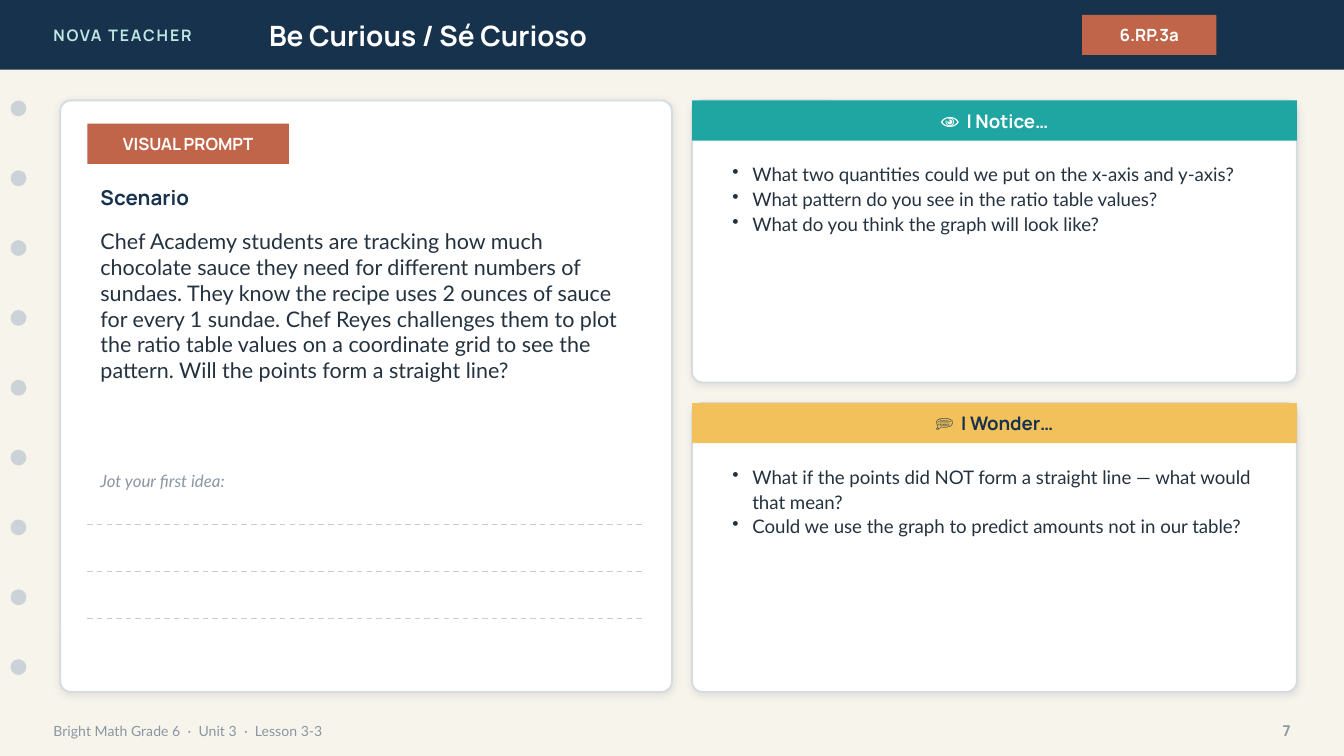
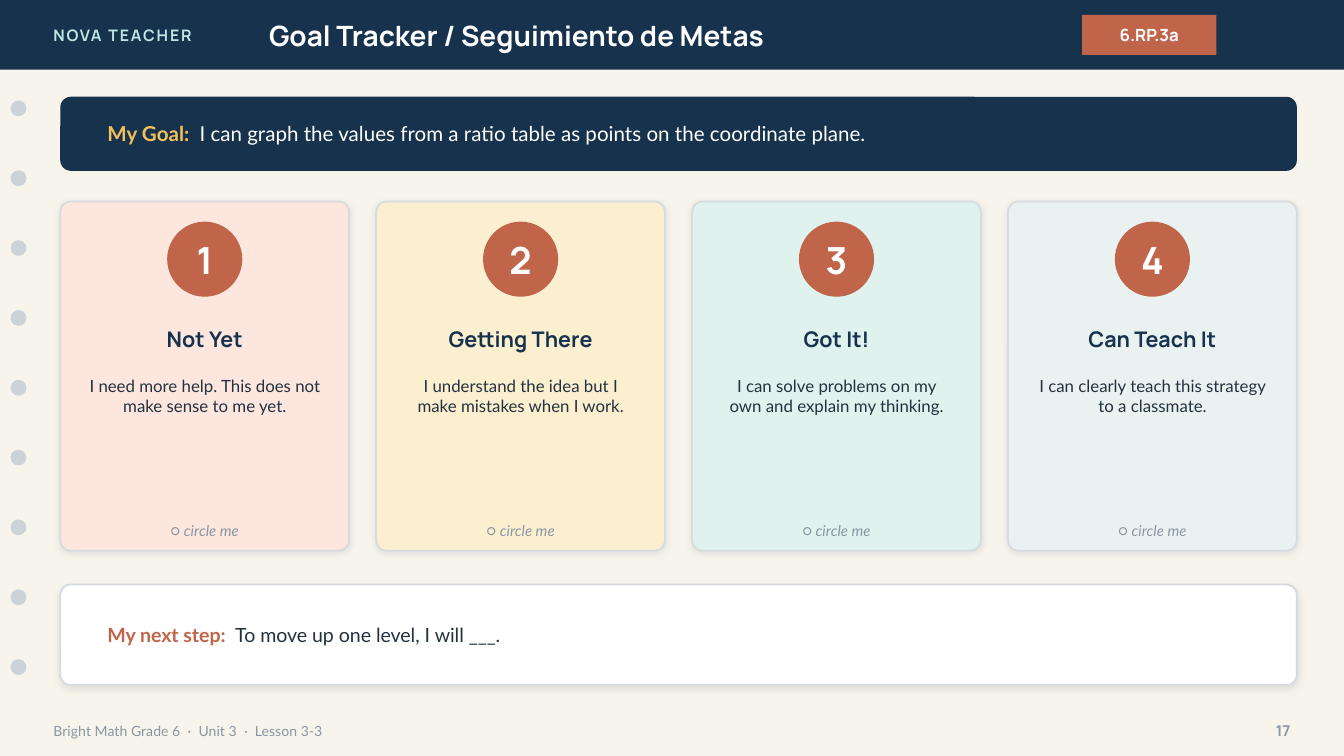
from dataclasses import dataclass, replace
from typing import NamedTuple

from lxml.etree import SubElement
from pptx import Presentation
from pptx.dml.color import RGBColor
from pptx.enum.dml import MSO_LINE
from pptx.enum.shapes import MSO_CONNECTOR, MSO_SHAPE
from pptx.enum.text import MSO_ANCHOR as ANCHOR, MSO_AUTO_SIZE, PP_ALIGN as ALIGN
from pptx.oxml.ns import qn
from pptx.util import Cm, Pt

NAVY, RUST, TEAL, GOLD, WHITE = "17324D", "C0654A", "1FA6A2", "F2C15B", "FFFFFF"
INK, MUTED, EDGE, PAPER = "24323F", "8A96A3", "D6DBDF", "F7F4EC"
HEAD, BODY = "Manrope", "Lato"
LEFT, WIDTH, RIGHT_COL = 1.14, 23.37, 13.08
RADIUS = 0.2
BAND_H = 1.32
BADGE_H = 0.76


class Box(NamedTuple):
    x: float
    y: float
    w: float
    h: float

    def cm(self) -> list[Cm]:
        return [Cm(v) for v in self]


@dataclass(frozen=True)
class Style:
    size: float
    color: str
    name: str = BODY
    bold: bool = False
    italic: bool = False


@dataclass(frozen=True)
class Panel:
    y: float
    h: float
    heading: str
    fill: str
    color: str
    questions: list[str]


@dataclass(frozen=True)
class Level:
    label: str
    description: str
    fill: str


BRAND = Style(8.5, "BFE6E2", HEAD, bold=True)
TITLE = Style(15, WHITE, HEAD, bold=True)
BADGE = Style(9, WHITE, HEAD, bold=True)
PAGE = Style(8, MUTED, HEAD, bold=True)
FOOTER = Style(7.5, MUTED)
SCENARIO_HEAD = Style(11, NAVY, HEAD, bold=True)
SCENARIO = Style(11.5, INK)
HINT = Style(9, MUTED, italic=True)
PANEL_HEAD = Style(10, WHITE, HEAD, bold=True)
QUESTION = Style(10, INK)
NUMBER = Style(20, WHITE, HEAD, bold=True)
LEVEL_HEAD = Style(11.5, NAVY, HEAD, bold=True)
LEVEL_BODY = Style(9, INK)
CIRCLE_ME = Style(8, MUTED, italic=True)
GOAL = Style(11, WHITE)
NEXT_STEP = Style(10.5, INK)

PANELS = [
    Panel(1.9, 5.33, "👁  I Notice…", TEAL, WHITE, [
        "What two quantities could we put on the x-axis and y-axis?",
        "What pattern do you see in the ratio table values?",
        "What do you think the graph will look like?",
    ]),
    Panel(7.62, 5.46, "💭  I Wonder…", GOLD, NAVY, [
        "What if the points did NOT form a straight line — what would that mean?",
        "Could we use the graph to predict amounts not in our table?",
    ]),
]

LEVELS = [
    Level("Not Yet", "I need more help. This does not make sense to me yet.", "FCE6DE"),
    Level("Getting There", "I understand the idea but I make mistakes when I work.", "FBEFD0"),
    Level("Got It!", "I can solve problems on my own and explain my thinking.", "DFF2EE"),
    Level("Can Teach It", "I can clearly teach this strategy to a classmate.", "EAF2F1"),
]


def rgb(color: str) -> RGBColor:
    return RGBColor.from_string(color)


def set_all(target, values: dict) -> None:
    for key, value in values.items():
        setattr(target, key, value)


def write(sp, paragraphs: list, align=ALIGN.LEFT, anchor=ANCHOR.MIDDLE, spacing=1.0):
    tf = sp.text_frame
    set_all(tf, dict(word_wrap=True, auto_size=MSO_AUTO_SIZE.NONE, vertical_anchor=anchor))
    for i, runs in enumerate(paragraphs):
        p = tf.add_paragraph() if i else tf.paragraphs[0]
        set_all(p, dict(alignment=align, line_spacing=spacing))
        for text, style in runs:
            r = p.add_run()
            r.text = text
            set_all(r.font, dict(size=Pt(style.size), name=style.name,
                                 bold=style.bold, italic=style.italic))
            r.font.color.rgb = rgb(style.color)
    return sp


def add_text(s, box: Box, text: str, style: Style, **layout):
    return write(s.shapes.add_textbox(*box.cm()), [[(text, style)]], **layout)


def add_labelled(s, box: Box, label: str, color: str, text: str, style: Style) -> None:
    label_style = replace(style, color=color, bold=True)
    write(s.shapes.add_textbox(*box.cm()), [[(label, label_style), (text, style)]])


def add_filled(s, box: Box, fill: str, kind=MSO_SHAPE.RECTANGLE):
    sp = s.shapes.add_shape(kind, *box.cm())
    sp.shadow.inherit = False
    sp.fill.solid()
    sp.fill.fore_color.rgb = rgb(fill)
    sp.line.fill.background()
    return sp


def add_bar(s, box: Box, fill: str, text: str, style: Style) -> None:
    write(add_filled(s, box, fill), [[(text, style)]], align=ALIGN.CENTER)


def add_rounded(s, box: Box, fill: str):
    sp = add_filled(s, box, fill, MSO_SHAPE.ROUNDED_RECTANGLE)
    sp.adjustments[0] = RADIUS / min(box.w, box.h)
    return sp


def add_card(s, box: Box, fill: str = WHITE) -> None:
    sp = add_rounded(s, box, fill)
    sp.line.color.rgb = rgb(EDGE)
    sp.line.width = Pt(1)
    effects = sp.element.spPr.find(qn("a:effectLst"))
    shadow = SubElement(effects, qn("a:outerShdw"), blurRad=str(Pt(4)), dist=str(Pt(1)),
                        dir="5400000", algn="bl", rotWithShape="0")
    tint = SubElement(shadow, qn("a:srgbClr"), val="1C2E42")
    SubElement(tint, qn("a:alpha"), val="10000")


def add_dashed_rule(s, x1: float, x2: float, y: float) -> None:
    rule = s.shapes.add_connector(MSO_CONNECTOR.STRAIGHT, Cm(x1), Cm(y), Cm(x2), Cm(y))
    rule.line.color.rgb = rgb("C7CDD2")
    set_all(rule.line, dict(width=Pt(0.75), dash_style=MSO_LINE.DASH))
    SubElement(rule.element.spPr, qn("a:effectLst"))


def add_bullets(s, box: Box, items: list[str]) -> None:
    sp = write(s.shapes.add_textbox(*box.cm()), [[(item, QUESTION)] for item in items],
               anchor=ANCHOR.TOP, spacing=1.1)
    for pPr in sp.element.iter(qn("a:pPr")):
        pPr.set("marL", str(Cm(0.38)))
        pPr.set("indent", str(Cm(-0.38)))
        SubElement(pPr, qn("a:buChar"), char="•")


def add_base(prs, title: str, page: int):
    s = prs.slides.add_slide(prs.slide_layouts[5])
    add_filled(s, Box(0, 0, 25.4, BAND_H), NAVY)
    brand = add_text(s, Box(0.76, 0, 6.1, BAND_H), "NOVA TEACHER", BRAND)
    for rPr in brand.element.iter(qn("a:rPr")):
        rPr.set("spc", "100")

    heading = s.shapes.title
    s.shapes.element.append(heading.element)
    set_all(heading, dict(zip(("left", "top", "width", "height"),
                              Box(4.83, 0, 14.22, BAND_H).cm())))
    write(heading, [[(title, TITLE)]])

    add_bar(s, Box(20.45, 0.28, 2.54, BADGE_H), RUST, "6.RP.3a", BADGE)
    for i in range(9):
        add_filled(s, Box(0.2, 1.9 + i * 1.32, 0.3, 0.3), "CBD3D9", MSO_SHAPE.OVAL)
    add_text(s, Box(0.76, 13.46, 17.78, 0.71),
             "Bright Math Grade 6  ·  Unit 3  ·  Lesson 3-3", FOOTER)
    add_text(s, Box(23.37, 13.46, 1.27, 0.71), str(page), PAGE, align=ALIGN.RIGHT)
    return s


def add_panel(s, panel: Panel) -> None:
    w = LEFT + WIDTH - RIGHT_COL
    add_card(s, Box(RIGHT_COL, panel.y, w, panel.h))
    add_bar(s, Box(RIGHT_COL, panel.y, w, BADGE_H), panel.fill, panel.heading,
            replace(PANEL_HEAD, color=panel.color))
    add_bullets(s, Box(RIGHT_COL + 0.51, panel.y + 1.02, w - 1.02, panel.h - 1.27),
                panel.questions)


def add_level(s, number: int, level: Level, x: float, w: float) -> None:
    add_card(s, Box(x, 3.81, w, 6.6), level.fill)
    d = 1.42
    disc = add_filled(s, Box(x + (w - d) / 2, 4.19, d, d), RUST, MSO_SHAPE.OVAL)
    write(disc, [[(str(number), NUMBER)]], align=ALIGN.CENTER)
    set_all(disc.text_frame, dict(word_wrap=False, margin_left=0, margin_right=0,
                                  margin_top=0, margin_bottom=0))
    for inset, y, h, text, style, anchor in (
        (0.13, 5.97, 0.89, level.label, LEVEL_HEAD, ANCHOR.MIDDLE),
        (0.3, 6.98, 2.92, level.description, LEVEL_BODY, ANCHOR.TOP),
        (0.13, 9.78, 0.51, "○ circle me", CIRCLE_ME, ANCHOR.MIDDLE),
    ):
        add_text(s, Box(x + inset, y, w - 2 * inset, h), text, style,
                 align=ALIGN.CENTER, anchor=anchor)


def build_curious(prs) -> None:
    s = add_base(prs, "Be Curious / Sé Curioso", 7)
    x, w = 1.65, 10.54
    add_card(s, Box(LEFT, 1.9, 11.56, 11.18))
    add_bar(s, Box(x, 2.34, 3.81, BADGE_H), RUST, "VISUAL PROMPT", BADGE)
    add_text(s, Box(x, 3.35, w, 0.76), "Scenario", SCENARIO_HEAD)
    add_text(s, Box(x, 4.19, w, 4.32),
             "Chef Academy students are tracking how much chocolate sauce they need for "
             "different numbers of sundaes. They know the recipe uses 2 ounces of sauce for "
             "every 1 sundae. Chef Reyes challenges them to plot the ratio table values on a "
             "coordinate grid to see the pattern. Will the points form a straight line?",
             SCENARIO, anchor=ANCHOR.TOP)
    add_text(s, Box(x, 8.76, 10.16, 0.64), "Jot your first idea:", HINT)
    for i in range(3):
        add_dashed_rule(s, x, x + w, 9.91 + i * 0.89)
    for panel in PANELS:
        add_panel(s, panel)


def build_goal_tracker(prs) -> None:
    s = add_base(prs, "Goal Tracker / Seguimiento de Metas", 17)
    add_rounded(s, Box(LEFT, 1.83, WIDTH, 1.4), NAVY)
    add_labelled(s, Box(1.78, 1.83, 22.1, 1.4), "My Goal:  ", GOLD,
                 "I can graph the values from a ratio table as points on the coordinate plane.",
                 GOAL)
    w = 5.46
    pitch = (WIDTH - w) / (len(LEVELS) - 1)
    for i, level in enumerate(LEVELS):
        add_level(s, i + 1, level, LEFT + i * pitch, w)
    add_card(s, Box(LEFT, 11.05, WIDTH, 1.9))
    add_labelled(s, Box(1.78, 11.05, 22.1, 1.9), "My next step:  ", RUST,
                 "To move up one level, I will ___.", NEXT_STEP)


def main() -> None:
    prs = Presentation()
    set_all(prs, dict(slide_width=Cm(25.4), slide_height=Cm(14.29)))
    background = prs.slide_master.background.fill
    background.solid()
    background.fore_color.rgb = rgb(PAPER)
    build_curious(prs)
    build_goal_tracker(prs)
    prs.save("out.pptx")


if __name__ == "__main__":
    main()
